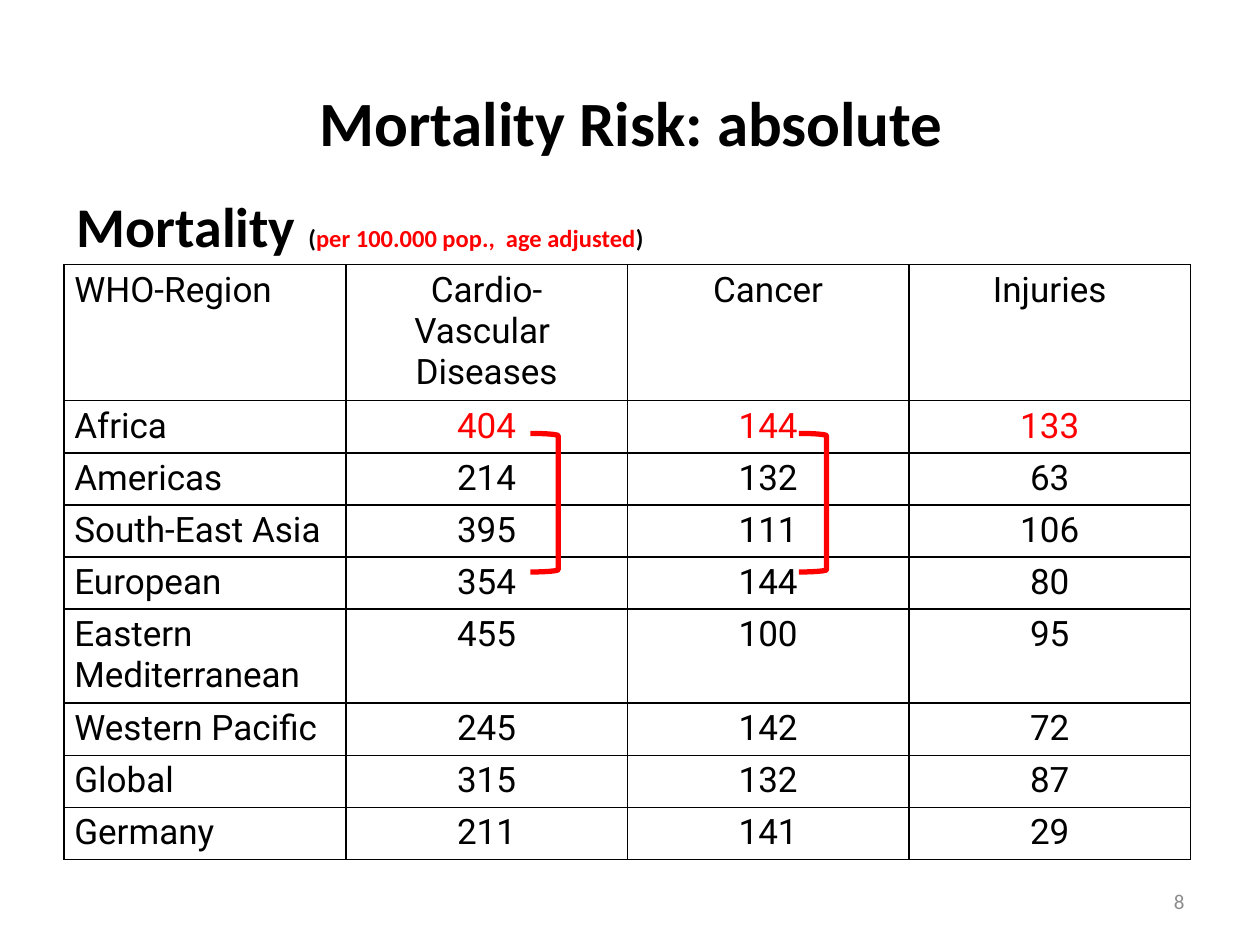
from pptx import Presentation
from pptx import util as u
from pptx.dml.color import RGBColor
from pptx.enum import shapes, text
from pptx.oxml import parse_xml
from pptx.oxml.ns import nsdecls

WIDTH, HEIGHT = 10, 7.5
BLACK, RED, GREY, WHITE = "000000", "FF0000", "8C8C8C", "FFFFFF"
LEFT, TABLE_TOP, COLUMN = 0.51, 2.1, 2.235
LINE_HEIGHT, CELL_PADDING = 0.32, 0.08
ALIGN = text.PP_ALIGN
ANCHOR = text.MSO_ANCHOR

ROWS = [
    ("WHO-Region", "Cardio-\nVascular \nDiseases", "Cancer", "Injuries"),
    ("Africa", "404", "144", "133"),
    ("Americas", "214", "132", "63"),
    ("South-East Asia", "395", "111", "106"),
    ("European", "354", "144", "80"),
    ("Eastern\nMediterranean", "455", "100", "95"),
    ("Western Pacific", "245", "142", "72"),
    ("Global", "315", "132", "87"),
    ("Germany", "211", "141", "29"),
]


def colour(value):
    return RGBColor.from_string(value)


def add_span(para, words, hue=BLACK, **font_format):
    span = para.add_run()
    span.text = words
    span.font.color.rgb = colour(hue)
    for name, value in font_format.items():
        setattr(span.font, name, value)


def add_text(page, area, spans, align=ALIGN.LEFT, anchor=ANCHOR.MIDDLE):
    """Add one paragraph made of (words, hue, size, bold) spans."""
    frame = page.shapes.add_textbox(*map(u.Inches, area)).text_frame
    frame.word_wrap = True
    frame.vertical_anchor = anchor
    para = frame.paragraphs[0]
    para.alignment = align
    for words, hue, size, bold in spans:
        add_span(para, words, hue, name="Calibri", size=u.Pt(size), bold=bold)


def add_borders(cell):
    properties = cell._tc.get_or_add_tcPr()
    for position, side in enumerate(("lnL", "lnR", "lnT", "lnB")):
        properties.insert(position, parse_xml(
            f'<a:{side} {nsdecls("a")} w="{u.Pt(1)}"><a:solidFill>'
            f'<a:srgbClr val="{BLACK}"/></a:solidFill></a:{side}>'))


def fill_cell(cell, words, hue, align):
    cell.fill.solid()
    cell.fill.fore_color.rgb = colour(WHITE)
    add_borders(cell)
    margins = dict(left=0.08, right=0.08, top=0.04, bottom=0.04)
    for side, margin in margins.items():
        setattr(cell, f"margin_{side}", u.Inches(margin))
    frame = cell.text_frame
    for index, line in enumerate(words.split("\n")):
        para = frame.add_paragraph() if index else frame.paragraphs[0]
        para.alignment = align
        add_span(para, line, hue, name="Roboto", size=u.Pt(20), bold=False)


def add_mortality_table(page):
    heights = [CELL_PADDING + LINE_HEIGHT * max(words.count("\n") + 1 for words in row)
               for row in ROWS]
    area = LEFT, TABLE_TOP, COLUMN * len(ROWS[0]), sum(heights)
    table = page.shapes.add_table(
        len(ROWS), len(ROWS[0]), *map(u.Inches, area)).table
    table.first_row = table.horz_banding = False
    for r, row in enumerate(ROWS):
        table.rows[r].height = u.Inches(heights[r])
        for c, words in enumerate(row):
            hue = RED if row[0] == "Africa" and c else BLACK
            fill_cell(table.cell(r, c), words, hue, ALIGN.CENTER if c else ALIGN.LEFT)


def add_bracket(page, left):
    area = left, 3.44, 0.22, 1.1
    bracket = page.shapes.add_shape(
        shapes.MSO_SHAPE.RIGHT_BRACKET, *map(u.Inches, area))
    bracket.shadow.inherit = False
    bracket.fill.background()
    bracket.line.color.rgb = colour(RED)
    bracket.line.width = u.Pt(3)


def main():
    deck = Presentation()
    deck.slide_width, deck.slide_height = u.Inches(WIDTH), u.Inches(HEIGHT)
    page = deck.slides.add_slide(deck.slide_layouts[6])
    add_text(page, (LEFT, 0.21, 0.9 * WIDTH, 1.51),
             [("Mortality Risk: absolute", BLACK, 36, True)], ALIGN.CENTER)
    add_text(page, (LEFT, 1.47, 8.36, 0.63),
             [("Mortality ", BLACK, 32, True),
              ("(", BLACK, 14, True),
              ("per 100.000 pop.,  age adjusted", RED, 14, True),
              (")", BLACK, 14, True)], anchor=ANCHOR.TOP)
    add_mortality_table(page)
    add_text(page, (7.17, 6.95, 2.33, 0.4), [("8", GREY, 12, False)], ALIGN.RIGHT)
    for left in (6.34, 4.21):
        add_bracket(page, left)
    deck.save("out.pptx")


if __name__ == "__main__":
    main()
